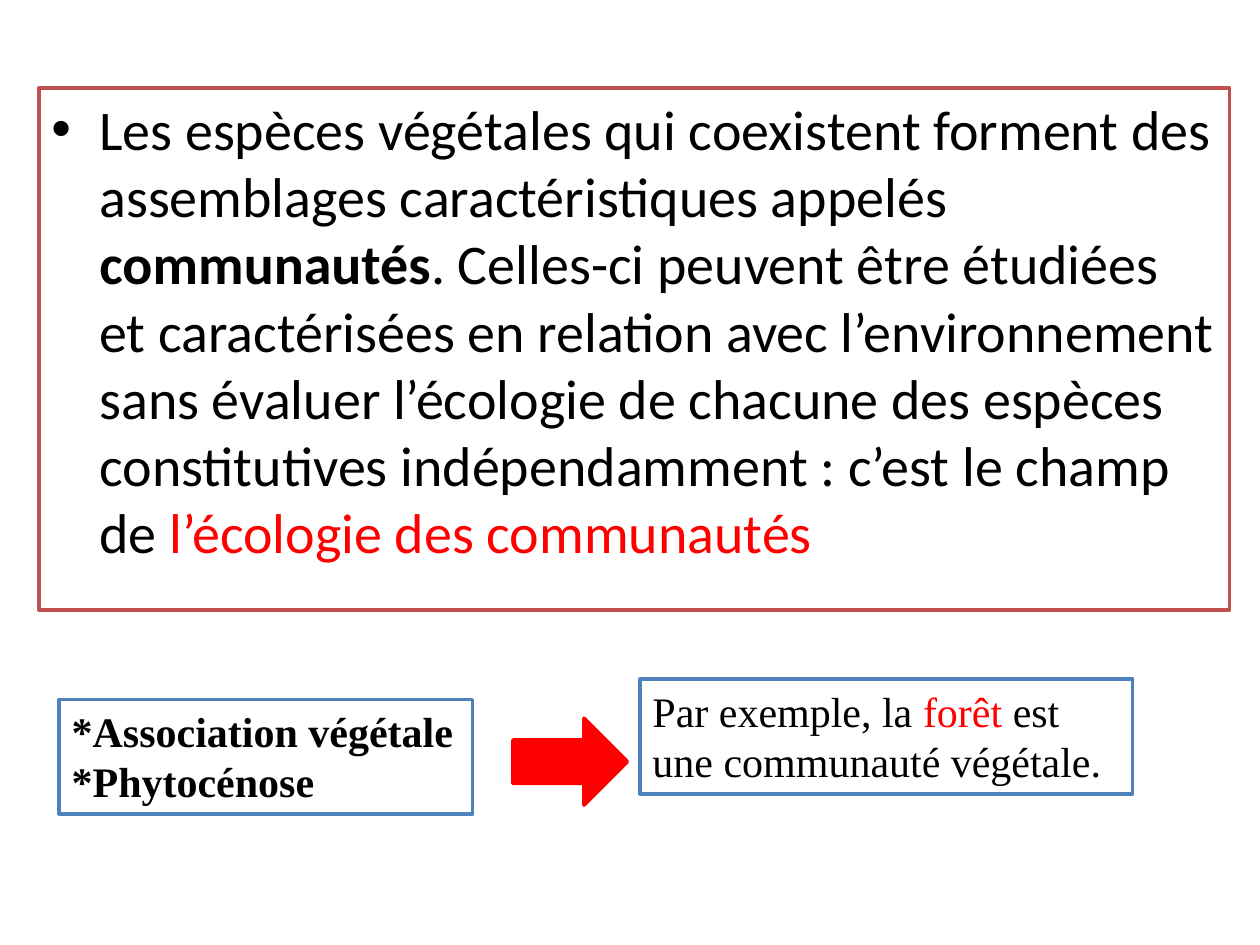
from dataclasses import dataclass
from typing import Optional

from lxml import etree
from pptx import Presentation
from pptx import util as u
from pptx.dml.color import RGBColor
from pptx.enum import shapes, text
from pptx.oxml.ns import qn


@dataclass(frozen=True)
class Theme:
    """Colours, fonts and sizes of the slide."""
    paper: str = "FFFFFF"
    ink: str = "000000"
    accent: str = "FF0000"
    definition_border: str = "C0504D"
    note_border: str = "4F81BD"
    definition_font: str = "Calibri"
    note_font: str = "Times New Roman"
    definition_size: int = 32
    note_size: int = 24
    border_width: int = 2


@dataclass(frozen=True)
class Run:
    """A stretch of words with its own emphasis."""
    words: str
    bold: bool = False
    color: str = Theme.ink


@dataclass(frozen=True)
class Panel:
    """A bordered box and its paragraphs."""
    left: float
    top: float
    width: float
    height: float
    border: str
    paragraphs: list[list[Run]]
    font: str = Theme.note_font
    size: int = Theme.note_size
    hanging: Optional[float] = None


THEME = Theme()

PANELS = [
    Panel(0.31, 0.7, 9.45, 4.14, THEME.definition_border, [[
        Run("Les espèces végétales qui coexistent forment des assemblages "
            "caractéristiques appelés "),
        Run("communautés", bold=True),
        Run(". Celles-ci peuvent être étudiées et caractérisées en relation avec "
            "l’environnement sans évaluer l’écologie de chacune des espèces "
            "constitutives indépendamment : c’est le champ de "),
        Run("l’écologie des communautés", color=THEME.accent),
    ]], THEME.definition_font, THEME.definition_size, hanging=0.38),
    Panel(0.47, 5.55, 3.28, 0.91, THEME.note_border, [
        [Run("*Association végétale", bold=True)],
        [Run("*Phytocénose", bold=True)],
    ]),
    Panel(5.08, 5.39, 3.91, 0.91, THEME.note_border, [[
        Run("Par exemple, la "),
        Run("forêt", color=THEME.accent),
        Run(" est une communauté végétale."),
    ]]),
]


def add_outlined(slide, preset, left: float, top: float, width: float,
                 height: float, *, fill: str, border: str):
    """Add a preset shape with a plain fill and border."""
    outlined = slide.shapes.add_shape(
        preset, u.Inches(left), u.Inches(top), u.Inches(width), u.Inches(height))
    outlined.shadow.inherit = False
    outlined.fill.solid()
    outlined.fill.fore_color.rgb = RGBColor.from_string(fill)
    outlined.line.color.rgb = RGBColor.from_string(border)
    outlined.line.width = u.Pt(THEME.border_width)
    return outlined


def add_bullet(paragraph, hanging: float) -> None:
    """Give a paragraph a round bullet with a hanging indent."""
    properties = paragraph._p.get_or_add_pPr()
    properties.set("marL", str(u.Inches(hanging)))
    properties.set("indent", str(-u.Inches(hanging)))
    etree.SubElement(properties, qn("a:buFont")).set("typeface", "Arial")
    etree.SubElement(properties, qn("a:buChar")).set("char", "•")


def write(paragraph, words: str, *, font: str, size: int, bold: bool,
          color: str) -> None:
    """Append formatted words to a paragraph."""
    run = paragraph.add_run()
    run.text = words
    run.font.name = font
    run.font.size = u.Pt(size)
    run.font.bold = bold
    run.font.color.rgb = RGBColor.from_string(color)


def draw_panel(slide, panel: Panel) -> None:
    """Draw a panel and fill in its paragraphs."""
    box = add_outlined(slide, shapes.MSO_SHAPE.RECTANGLE, panel.left, panel.top,
                       panel.width, panel.height, fill=THEME.paper,
                       border=panel.border)
    frame = box.text_frame
    frame.word_wrap = True
    frame.vertical_anchor = text.MSO_ANCHOR.TOP
    for index, runs in enumerate(panel.paragraphs):
        paragraph = frame.add_paragraph() if index else frame.paragraphs[0]
        paragraph.alignment = text.PP_ALIGN.LEFT
        if panel.hanging:
            add_bullet(paragraph, panel.hanging)
        for run in runs:
            write(paragraph, run.words, font=panel.font, size=panel.size,
                  bold=run.bold, color=run.color)


def main() -> None:
    """Build the slide on plant communities."""
    deck = Presentation()
    deck.slide_width, deck.slide_height = u.Inches(10), u.Inches(7.5)
    slide = deck.slides.add_slide(deck.slide_layouts[6])
    definition, synonyms, example = PANELS
    draw_panel(slide, definition)
    draw_panel(slide, synonyms)
    arrow = add_outlined(slide, shapes.MSO_SHAPE.DOWN_ARROW, 4.18, 5.59, 0.69, 0.91,
                         fill=THEME.accent, border=THEME.accent)
    arrow.rotation = 270
    draw_panel(slide, example)
    deck.save("out.pptx")


if __name__ == "__main__":
    main()
